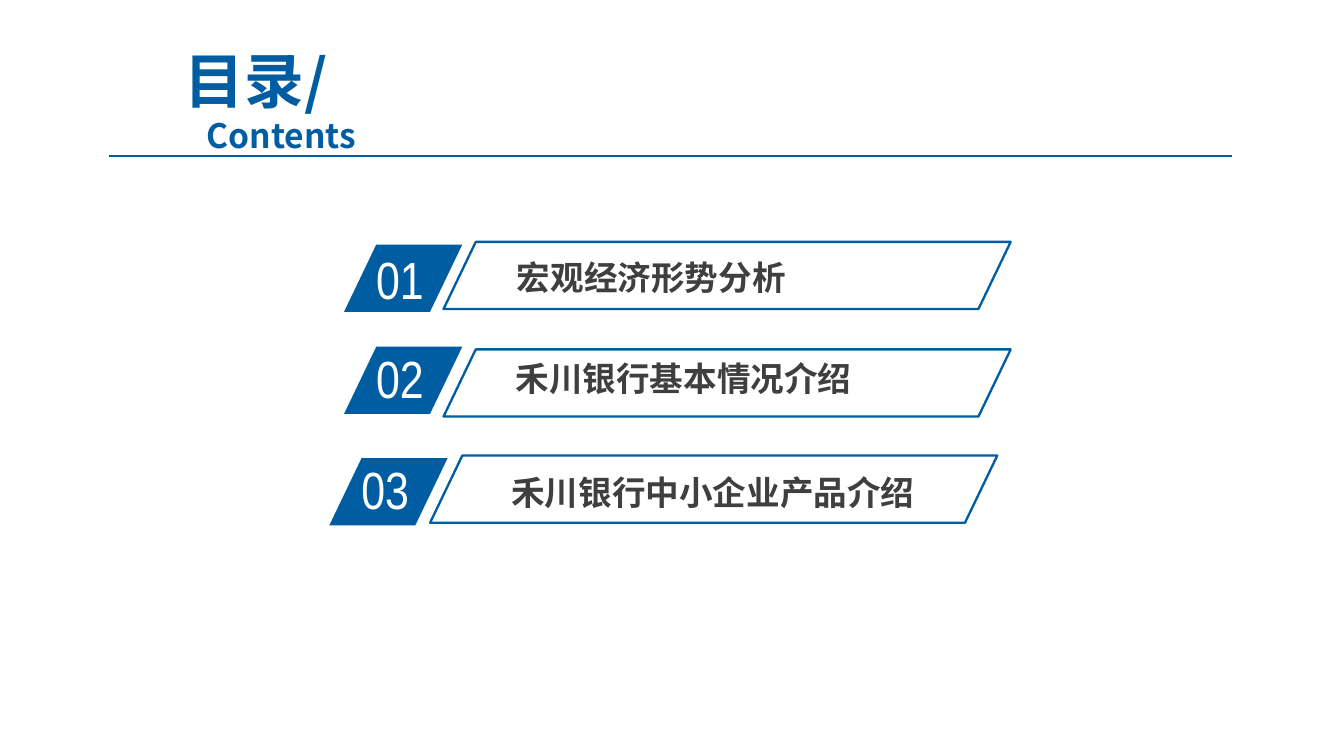
from pptx import Presentation
from pptx.dml.color import RGBColor
from pptx.enum.shapes import MSO_CONNECTOR, MSO_SHAPE
from pptx.enum.text import MSO_ANCHOR, MSO_AUTO_SIZE, PP_ALIGN
from pptx.oxml.ns import qn
from pptx.util import Inches, Pt
from lxml.etree import SubElement

BLUE, GREY, WHITE = "005DA2", "3F3F3F", "FFFFFF"
CJK, NARROW = "Noto Sans CJK SC", "Arial Narrow"


def rgb(value):
    return RGBColor.from_string(value)


class Deck:
    """Holds the slide and the style of its elements."""

    def __init__(self, prs):
        self.s = prs.slides.add_slide(prs.slide_layouts[5])

    def run(self, p, text, size, font, color, bold=False):
        r = p.add_run()
        r.text = text
        r.font.size, r.font.name, r.font.bold = Pt(size), font, bold
        r.font.color.rgb = rgb(color)
        SubElement(r.font._element, qn("a:ea")).set("typeface", font)

    def title(self, x, y, w, h, text, subtitle):
        sp = self.s.shapes.title
        sp.left, sp.top, sp.width, sp.height = map(Inches, (x, y, w, h))
        tf = sp.text_frame
        tf.auto_size, tf.word_wrap = MSO_AUTO_SIZE.NONE, True
        tf.vertical_anchor = MSO_ANCHOR.MIDDLE
        p = tf.paragraphs[0]
        p.alignment = PP_ALIGN.CENTER
        # Hanging indent shifts the second line to the right
        pPr = p._p.get_or_add_pPr()
        pPr.set("marL", str(Inches(0.38)))
        pPr.set("indent", str(Inches(-0.38)))
        self.run(p, text, 32, CJK, BLUE, True)
        p.add_line_break()
        self.run(p, subtitle, 18, CJK, BLUE, True)

    def rule(self, x1, x2, y):
        c = self.s.shapes.add_connector(
            MSO_CONNECTOR.STRAIGHT, Inches(x1), Inches(y), Inches(x2), Inches(y))
        c.line.color.rgb, c.line.width = rgb(BLUE), Pt(0.75)
        SubElement(c._element.spPr, qn("a:effectLst"))

    def slant(self, x, y, w, filled):
        sp = self.s.shapes.add_shape(
            MSO_SHAPE.PARALLELOGRAM, Inches(x), Inches(y), Inches(w), Inches(0.5))
        sp.adjustments[0] = 0.48
        sp.shadow.inherit = False
        if filled:
            sp.fill.solid()
            sp.fill.fore_color.rgb = rgb(BLUE)
            sp.line.fill.background()
        else:
            sp.fill.background()
            sp.line.color.rgb, sp.line.width = rgb(BLUE), Pt(1.25)

    def text(self, x, y, w, h, text, size, font, color, bold=False,
             align=PP_ALIGN.LEFT, inset=(0.1, 0.05)):
        tf = self.s.shapes.add_textbox(
            Inches(x), Inches(y), Inches(w), Inches(h)).text_frame
        tf.word_wrap = True
        tf.margin_left = tf.margin_right = Inches(inset[0])
        tf.margin_top = tf.margin_bottom = Inches(inset[1])
        p = tf.paragraphs[0]
        p.alignment = align
        self.run(p, text, size, font, color, bold)

    def entry(self, number, x, badge_y, number_y, frame_x, frame_y, label):
        self.slant(x, badge_y, 0.88, True)
        self.text(x + 0.14, number_y, 0.84, 0.49, number, 28, NARROW, WHITE)
        self.slant(frame_x, frame_y, 4.22, False)
        label_x, label_y, label_w, words = label
        self.text(label_x, label_y, label_w, 0.38, words, 18, CJK, GREY, True,
                  PP_ALIGN.CENTER, (0.07, 0.04))


def main():
    # Widescreen page, 16:9
    prs = Presentation()
    prs.slide_width = Inches(10)
    prs.slide_height = Inches(10) * 9 // 16
    deck = Deck(prs)

    # Heading
    deck.title(0.67, 0.47, 2.47, 0.54, "目录/", "Contents")
    deck.rule(0.81, 9.17, 1.16)

    # Contents: badge x and y, number y, frame x and y, label
    entries = [
        (2.56, 1.82, 1.79, 3.3, 1.8, (3.3, 1.87, 3.09, "宏观经济形势分析")),
        (2.56, 2.58, 2.53, 3.3, 2.6, (3.54, 2.62, 3.09, "禾川银行基本情况介绍")),
        (2.45, 3.41, 3.35, 3.2, 3.39, (3.62, 3.47, 3.37, "禾川银行中小企业产品介绍")),
    ]
    for i, entry in enumerate(entries, 1):
        deck.entry(f"{i:02}", *entry)

    prs.save("out.pptx")


if __name__ == "__main__":
    main()
